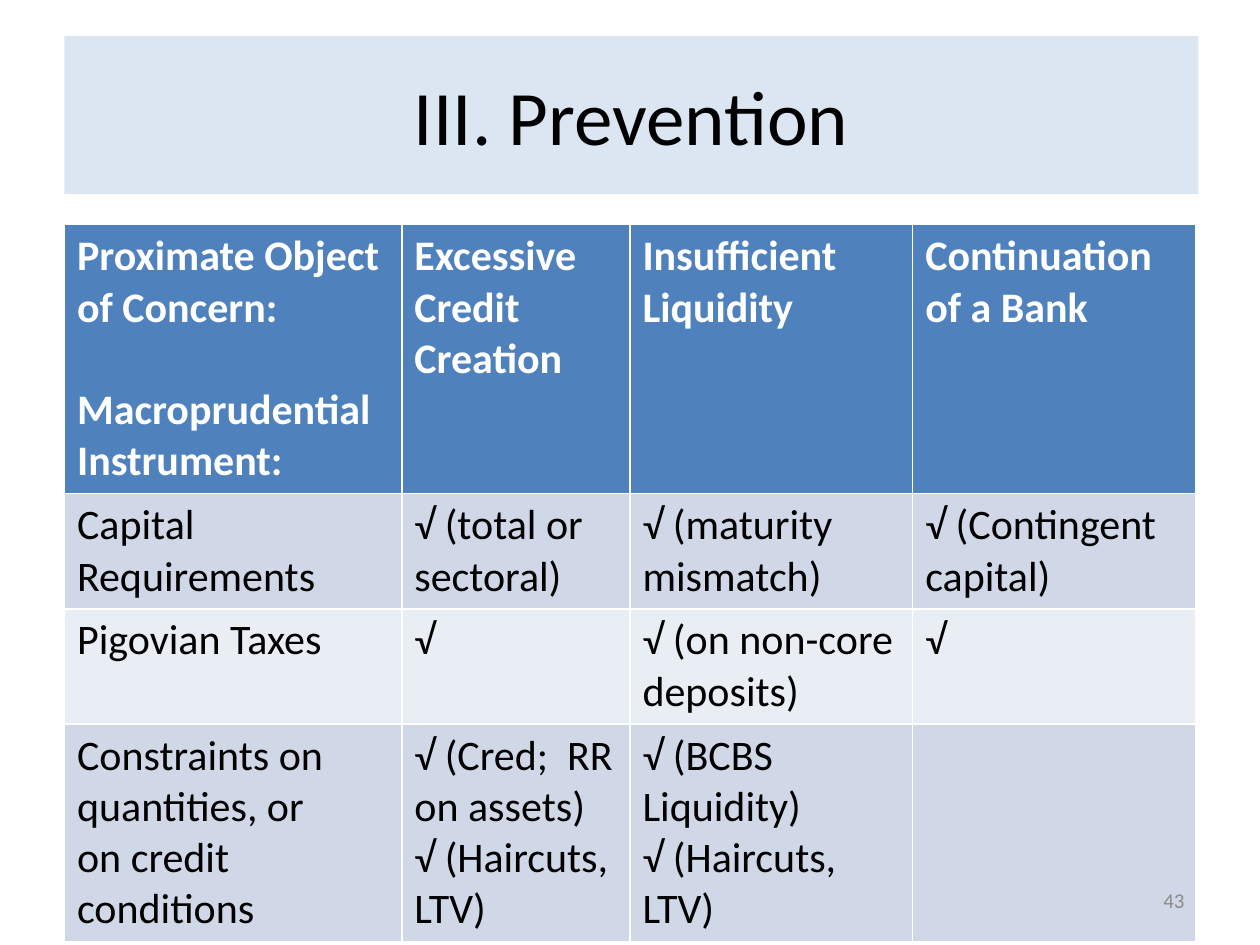
"""Build a slide with a table of macroprudential instruments by object of concern."""
import pptx
import pptx.dml.color
import pptx.enum.text
import pptx.util
from pptx.dml.color import RGBColor
from pptx.util import Cm

WHITE = RGBColor(0xFF, 0xFF, 0xFF)
BLACK = RGBColor(0x00, 0x00, 0x00)
GREY = RGBColor(0x8C, 0x8C, 0x8C)
PALE_BLUE = RGBColor(0xDC, 0xE6, 0xF2)
HEADER_BLUE = RGBColor(0x4F, 0x81, 0xBD)
BANDS = (RGBColor(0xD0, 0xD8, 0xE8), RGBColor(0xE9, 0xED, 0xF4))

FONT = "Calibri"
LEFT = Cm(1.3)
LINE_GAP = pptx.util.Pt(29.3)
COLUMN_WIDTHS = (6.8, 4.6, 5.7, 5.7)
ROW_HEIGHTS = (5.4, 2.3, 2.3, 4.35)
ROWS = (
    ("Proximate Object of Concern:\nMacroprudential Instrument:",
     "Excessive Credit Creation", "Insufficient\nLiquidity", "Continuation of a Bank"),
    ("Capital Requirements", "√ (total or sectoral)", "√ (maturity mismatch)",
     "√ (Contingent capital)"),
    ("Pigovian Taxes", "√", "√ (on non-core deposits)", "√"),
    ("Constraints on quantities, or\non credit conditions",
     "√ (Cred;  RR on assets)\n√ (Haircuts, LTV)",
     "√ (BCBS Liquidity)\n√ (Haircuts, LTV)", ""),
)


def write(tf, text, size, color, align=pptx.enum.text.PP_ALIGN.LEFT, bold=False):
    tf.text = text
    for p in tf.paragraphs:
        p.alignment = align
        p.font.name = FONT
        p.font.size = pptx.util.Pt(size)
        p.font.bold = bold
        p.font.color.rgb = color


def set_title(s, text):
    sp = s.shapes.title
    sp.left, sp.top, sp.width, sp.height = LEFT, Cm(0.73), Cm(22.86), Cm(3.18)
    sp.fill.solid()
    sp.fill.fore_color.rgb = PALE_BLUE
    sp.text_frame.vertical_anchor = pptx.enum.text.MSO_ANCHOR.MIDDLE
    write(sp.text_frame, text, 44, BLACK, pptx.enum.text.PP_ALIGN.CENTER)


def add_instrument_table(s):
    table = s.shapes.add_table(len(ROWS), len(COLUMN_WIDTHS), LEFT, Cm(4.53),
                               Cm(sum(COLUMN_WIDTHS)), Cm(sum(ROW_HEIGHTS))).table
    for column, width in zip(table.columns, COLUMN_WIDTHS):
        column.width = Cm(width)
    for i, (row, height, texts) in enumerate(zip(table.rows, ROW_HEIGHTS, ROWS)):
        row.height = Cm(height)
        header = i == 0
        for cell, text in zip(row.cells, texts):
            cell.fill.solid()
            cell.fill.fore_color.rgb = HEADER_BLUE if header else BANDS[(i - 1) % 2]
            write(cell.text_frame, text, 24, WHITE if header else BLACK, bold=header)
    table.cell(0, 0).text_frame.paragraphs[1].space_before = LINE_GAP


def add_slide_number(s, text):
    tf = s.shapes.add_textbox(Cm(18.2), Cm(17.65), Cm(5.93), Cm(1.01)).text_frame
    tf.word_wrap = True
    tf.vertical_anchor = pptx.enum.text.MSO_ANCHOR.MIDDLE
    write(tf, text, 12, GREY, pptx.enum.text.PP_ALIGN.RIGHT)


def main():
    prs = pptx.Presentation()
    prs.slide_width, prs.slide_height = Cm(25.4), Cm(19.05)
    s = prs.slides.add_slide(prs.slide_layouts.get_by_name("Title Only"))
    set_title(s, "III. Prevention")
    add_instrument_table(s)
    add_slide_number(s, "43")
    prs.save("out.pptx")


if __name__ == "__main__":
    main()
